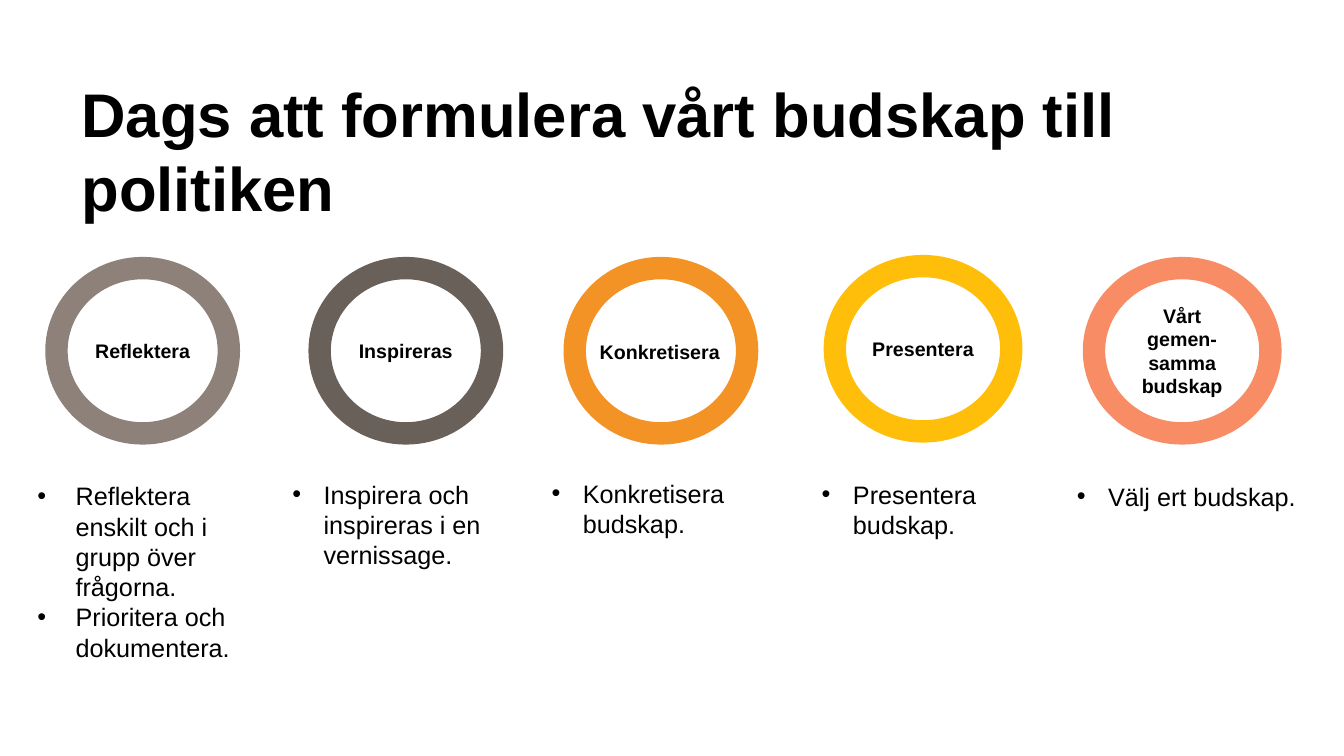
from lxml import etree
from pptx import Presentation
from pptx.dml.color import RGBColor
from pptx.enum.shapes import MSO_SHAPE
from pptx.enum.text import MSO_ANCHOR, PP_ALIGN
from pptx.oxml.ns import qn
from pptx.util import Inches, Pt

CIRCLE = MSO_SHAPE.FLOWCHART_CONNECTOR
MIDDLE = MSO_ANCHOR.MIDDLE
CENTER = PP_ALIGN.CENTER
FONT = "Arial"
COLORS = {
    "text": "000000",
    "white": "FFFFFF",
    "taupe": "8D8179",
    "brown": "6A605A",
    "orange": "F39325",
    "yellow": "FFBE0A",
    "coral": "F88C64",
}

TITLE = "Dags att formulera vårt budskap till politiken"
# Ring label, colour, ring (left, top, width)
RINGS = [
    ("Reflektera", "taupe", (0.56, 2.66, 1.71)),
    ("Inspireras", "brown", (3.17, 2.66, 1.71)),
    ("", "orange", (5.7, 2.66, 1.71)),
    ("Presentera", "yellow", (8.28, 2.64, 1.75)),
    ("Vårt gemen-samma budskap", "coral", (10.85, 2.66, 1.75)),
]
# Too wide for the text area of its ring, so it has a box of its own
WIDE_LABEL = ("Konkretisera", (5.85, 3.32, 1.77, 0.34))
# Bullets, box (left, top, width, height), text indent, hanging indent
STEPS = [
    (["Reflektera enskilt och i grupp över frågorna.",
      "Prioritera och dokumentera."], (0.25, 4.65, 2.41, 2.06), 0.38, 0.38),
    (["Inspirera och inspireras i en vernissage."],
     (2.78, 4.63, 2.49, 1.15), 0.31, 0.31),
    (["Konkretisera budskap."], (5.35, 4.62, 2.41, 1.15), 0.31, 0.31),
    (["Presentera budskap."], (7.99, 4.63, 2.33, 1.32), 0.35, 0.31),
    (["Välj ert budskap."], (10.52, 4.65, 2.74, 1.01), 0.35, 0.31),
]
RING_HEIGHT = 1.64
RING_LINE = 16
STEP_INSET = 0.12


def color(name):
    return RGBColor.from_string(COLORS[name])


def style(paragraph, size, bold=False):
    font = paragraph.font
    font.name = FONT
    font.size = Pt(size)
    font.bold = bold
    font.color.rgb = color("text")


def add_text_box(slide, box):
    frame = slide.shapes.add_textbox(*map(Inches, box)).text_frame
    frame.word_wrap = True
    return frame


def add_line(slide, text, box, size):
    paragraph = add_text_box(slide, box).paragraphs[0]
    paragraph.text = text
    style(paragraph, size, bold=True)


def add_ring(slide, label, color_name, place):
    left, top, width = map(Inches, place)
    shape = slide.shapes.add_shape(CIRCLE, left, top, width, Inches(RING_HEIGHT))
    shape.shadow.inherit = False
    shape.fill.solid()
    shape.fill.fore_color.rgb = color("white")
    shape.line.color.rgb = color(color_name)
    shape.line.width = Pt(RING_LINE)
    if label:
        frame = shape.text_frame
        frame.word_wrap = True
        frame.vertical_anchor = MIDDLE
        paragraph = frame.paragraphs[0]
        paragraph.text = label
        paragraph.alignment = CENTER
        style(paragraph, 14, bold=True)


def add_bullets(slide, texts, box, indent, hanging):
    frame = add_text_box(slide, box)
    frame.margin_left = frame.margin_right = Inches(STEP_INSET)
    frame.margin_top = frame.margin_bottom = Inches(STEP_INSET)
    for index, text in enumerate(texts):
        paragraph = frame.add_paragraph() if index else frame.paragraphs[0]
        paragraph.text = text
        properties = paragraph._p.get_or_add_pPr()
        properties.set("marL", str(Inches(indent)))
        properties.set("indent", str(-Inches(hanging)))
        etree.SubElement(properties, qn("a:buFont"), typeface=FONT)
        etree.SubElement(properties, qn("a:buChar"), char="•")
        style(paragraph, 18)


def main():
    presentation = Presentation()
    presentation.slide_width = Inches(13.33)
    presentation.slide_height = Inches(7.5)
    slide = presentation.slides.add_slide(presentation.slide_layouts[6])

    add_line(slide, TITLE, (0.71, 0.7, 10.51, 1.35), 44)
    for ring in RINGS:
        add_ring(slide, *ring)
    add_line(slide, *WIDE_LABEL, 14)
    for step in STEPS:
        add_bullets(slide, *step)

    presentation.save("out.pptx")


if __name__ == "__main__":
    main()
